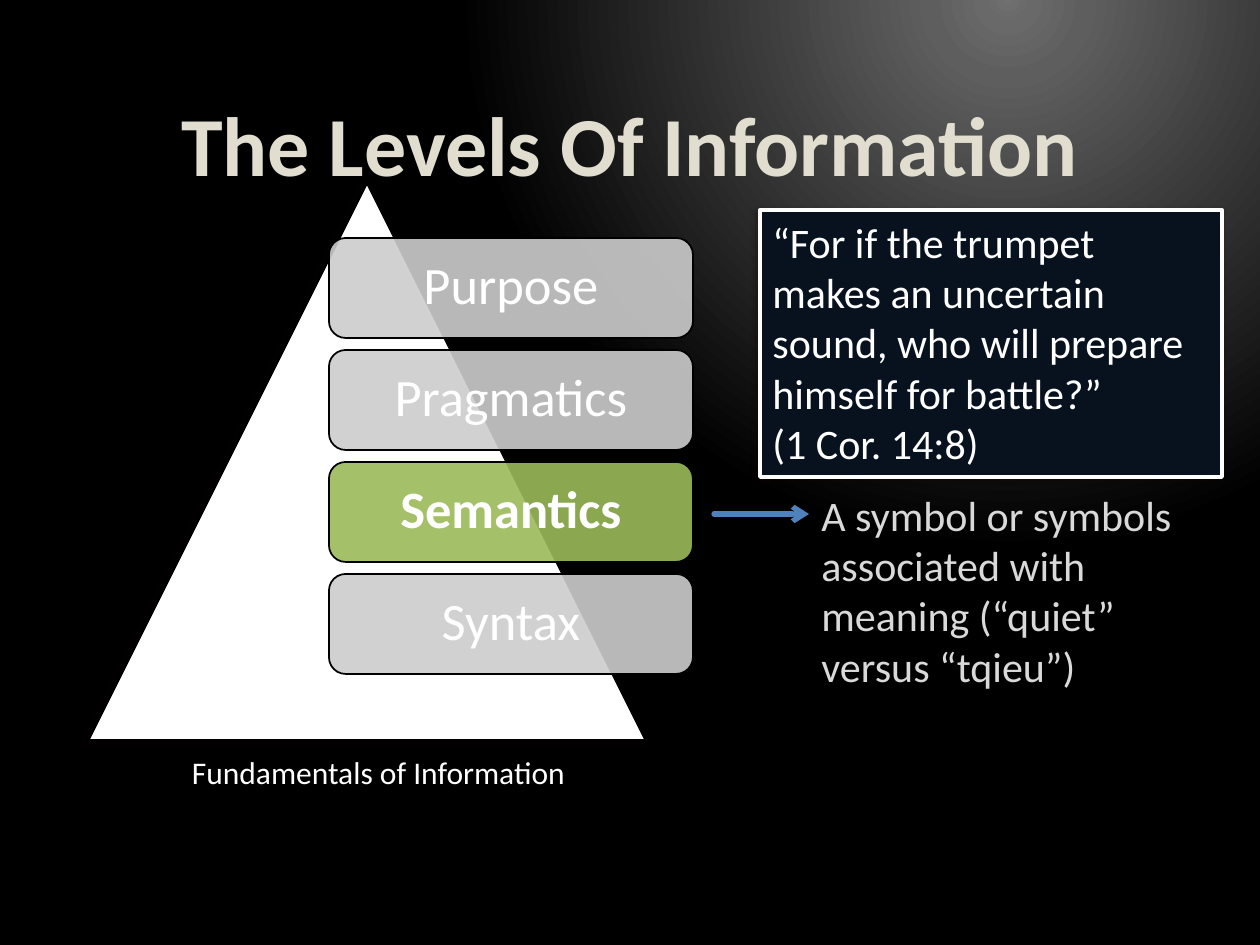
from pptx import Presentation
from pptx import util as u
from pptx.dml.color import RGBColor
from pptx.enum import shapes, text
from pptx.oxml import parse_xml
from pptx.oxml.ns import nsdecls, qn

EMU_PER_PX = 914400 / 126
FONT = "Calibri"
COLORS = {
    "title": "E1DECF", "white": "FFFFFF", "black": "000000",
    "muted": "D9D9D9", "level": "CCCCCC", "active": "9BBB59",
    "arrow": "4F81BD", "quote": "08121F", "shadow": "1A0000",
}
# Position in percent and colour of each background stop
GLOW = [(0, "707070"), (3, "696969"), (10, "5E5E5E"), (70, "000000"), (100, "000000")]
LEVELS = ["Purpose", "Pragmatics", "Semantics", "Syntax"]
ACTIVE = "Semantics"


def px(value):
    return u.Emu(round(value * EMU_PER_PX))


def color(name):
    return RGBColor.from_string(COLORS[name])


def xml(markup):
    """Parse one DrawingML element, adding the namespace to its tag."""
    tag, rest = markup.split(" ", 1)
    return parse_xml(f"{tag} {nsdecls('a')} {rest}")


def set_background(page):
    fill = page.background.fill
    fill.solid()
    stops = "".join(
        f'<a:gs pos="{at * 1000}"><a:srgbClr val="{shade}"/></a:gs>' for at, shade in GLOW)
    gradient = xml(
        f'<a:gradFill rotWithShape="1"><a:gsLst>{stops}</a:gsLst><a:path path="circle">'
        '<a:fillToRect l="60000" t="-3000" r="0" b="200000"/></a:path></a:gradFill>')
    solid = next(page.element.iter(qn("a:solidFill")))
    solid.getparent().replace(solid, gradient)


def write(shape, words, size, ink="white", bold=False,
          align=text.PP_ALIGN.LEFT, anchor=text.MSO_ANCHOR.TOP, spacing=None):
    frame = shape.text_frame
    frame.word_wrap = True
    frame.vertical_anchor = anchor
    para = frame.paragraphs[0]
    para.text = words
    para.alignment = align
    para.line_spacing = spacing
    for span in para.runs:
        span.font.name = FONT
        span.font.size = u.Pt(size)
        span.font.bold = bold
        span.font.color.rgb = color(ink)


def add_text(page, left, top, width, height, words, **style):
    box = page.shapes.add_textbox(px(left), px(top), px(width), px(height))
    write(box, words, **style)


def add_block(page, kind, left, top, width, height, fill, line, weight):
    block = page.shapes.add_shape(kind, px(left), px(top), px(width), px(height))
    block.shadow.inherit = False
    block.fill.solid()
    block.fill.fore_color.rgb = color(fill)
    block.line.color.rgb = color(line)
    block.line.width = u.Pt(weight)
    return block


def add_shadow(shape):
    effects = shape.element.spPr.find(qn("a:effectLst"))
    effects.append(xml(
        '<a:outerShdw blurRad="39000" dist="25400" dir="9000000" rotWithShape="0">'
        f'<a:srgbClr val="{COLORS["shadow"]}"><a:alpha val="35000"/></a:srgbClr></a:outerShdw>'))


def add_level(page, top, name):
    active = name == ACTIVE
    block = add_block(page, shapes.MSO_SHAPE.ROUNDED_RECTANGLE, 329, top, 364, 100,
                      "active" if active else "level", "black", 1)
    shade = next(block.element.spPr.iter(qn("a:srgbClr")))
    shade.append(xml('<a:alpha val="90000"/>'))
    write(block, name, 30, bold=active, align=text.PP_ALIGN.CENTER,
          anchor=text.MSO_ANCHOR.MIDDLE, spacing=0.9)


def add_arrow(page, left, right, y):
    arrow = page.shapes.add_connector(
        shapes.MSO_CONNECTOR.STRAIGHT, px(left), px(y), px(right), px(y))
    arrow.line.color.rgb = color("arrow")
    arrow.line.width = u.Pt(3)
    line = arrow.line._get_or_add_ln()
    line.set("cap", "rnd")
    line.append(xml('<a:tailEnd type="arrow"/>'))
    arrow.element.spPr.append(xml("<a:effectLst />"))


def main():
    deck = Presentation()
    deck.slide_width, deck.slide_height = px(1260), px(945)
    page = deck.slides.add_slide(deck.slide_layouts[6])
    set_background(page)

    # Title and caption
    add_text(page, 63, 42, 1134, 158, "The Levels Of Information", size=48, ink="title",
             bold=True, align=text.PP_ALIGN.CENTER, anchor=text.MSO_ANCHOR.BOTTOM)
    add_text(page, 53, 747, 651, 50, "Fundamentals of Information", size=18,
             align=text.PP_ALIGN.CENTER)

    # Pyramid with its levels
    pyramid = add_block(page, shapes.MSO_SHAPE.ISOSCELES_TRIANGLE, 87, 181, 560, 560,
                        "white", "black", 2.21)
    add_shadow(pyramid)
    for row, name in enumerate(LEVELS):
        add_level(page, 238 + 112 * row, name)

    # Meaning of the active level
    add_text(page, 809, 483, 410, 217,
             "A symbol or symbols associated with meaning (“quiet” versus “tqieu”)",
             size=24, ink="muted")
    add_arrow(page, 714, 809, 514)

    # Quotation
    quote = add_block(page, shapes.MSO_SHAPE.RECTANGLE, 760, 210, 462, 267,
                      "quote", "white", 2.21)
    add_shadow(quote)
    write(quote, "“For if the trumpet makes an uncertain sound, who will prepare "
                 "himself for battle?”\v(1 Cor. 14:8)", 24)

    deck.save("out.pptx")


if __name__ == "__main__":
    main()
